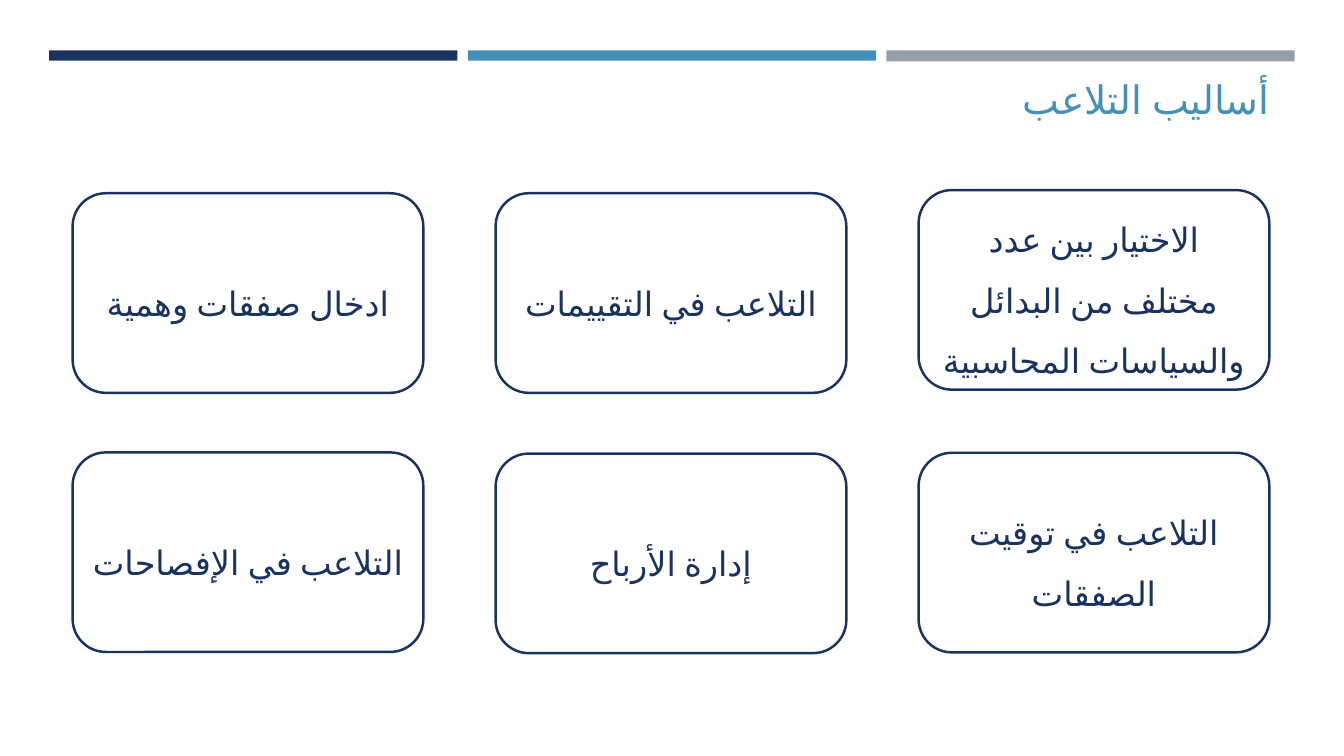
from typing import NamedTuple

from pptx import Presentation
from pptx.dml.color import RGBColor
from pptx.enum.shapes import MSO_SHAPE as SHAPE
from pptx.enum.text import MSO_ANCHOR as ANCHOR, MSO_AUTO_SIZE as AUTO, PP_ALIGN as ALIGN
from pptx.util import Cm, Pt

COLORS = {"navy": "1A3260", "blue": "4590B8", "gray": "969FA7", "white": "FFFFFF"}
FONT = "Cabin"
LANGUAGE = "ar-EG"

BAR_LEFT, BAR_TOP, BAR_WIDTH, BAR_PITCH = 1.24, 1.27, 10.29, 10.55
BOX_LEFT, BOX_PITCH, BOX_WIDTH, BOX_HEIGHT = 1.83, 10.66, 8.84, 5.03


class Bar(NamedTuple):
    color: str
    height: float


class Method(NamedTuple):
    column: int
    top: float
    text: str


BARS = [Bar("navy", 0.26), Bar("blue", 0.26), Bar("gray", 0.28)]
METHODS = [
    Method(2, 4.79, "الاختيار بين عدد مختلف من البدائل والسياسات المحاسبية"),
    Method(1, 4.87, "التلاعب في التقييمات"),
    Method(0, 4.87, "ادخال صفقات وهمية"),
    Method(2, 11.41, "التلاعب في توقيت الصفقات"),
    Method(1, 11.43, "إدارة الأرباح"),
    Method(0, 11.4, "التلاعب في الإفصاحات"),
]


def rgb(name: str) -> RGBColor:
    return RGBColor.from_string(COLORS[name])


def set_all(target, values: dict) -> None:
    for name, value in values.items():
        setattr(target, name, value)


def write_arabic(sp, text: str, size: float, color: str, frame: dict, paragraph: dict) -> None:
    """Fill the shape with one right-to-left paragraph."""
    tf = sp.text_frame
    set_all(tf, {"word_wrap": True, "auto_size": AUTO.NONE, **frame})
    p = tf.paragraphs[0]
    set_all(p, paragraph)
    p._p.get_or_add_pPr().set("rtl", "1")
    r = p.add_run()
    r.text = text
    set_all(r.font, {"name": FONT, "size": Pt(size)})
    r.font.color.rgb = rgb(color)
    r.font._element.set("lang", LANGUAGE)


def add_filled(slide, kind: SHAPE, left: float, top: float, width: float, height: float, fill: str):
    sp = slide.shapes.add_shape(kind, Cm(left), Cm(top), Cm(width), Cm(height))
    sp.shadow.inherit = False
    sp.fill.solid()
    sp.fill.fore_color.rgb = rgb(fill)
    return sp


def add_bar(slide, column: int, bar: Bar) -> None:
    sp = add_filled(slide, SHAPE.RECTANGLE, BAR_LEFT + column * BAR_PITCH, BAR_TOP,
                    BAR_WIDTH, bar.height, bar.color)
    sp.line.fill.background()


def add_title(slide, text: str) -> None:
    sp = slide.shapes.title
    set_all(sp, {"left": Cm(1.63), "top": Cm(1.78), "width": Cm(30.63), "height": Cm(3.05)})
    write_arabic(sp, text, 28, "blue", {"vertical_anchor": ANCHOR.TOP}, {"alignment": ALIGN.RIGHT})


def add_method(slide, method: Method) -> None:
    sp = add_filled(slide, SHAPE.ROUNDED_RECTANGLE, BOX_LEFT + method.column * BOX_PITCH,
                    method.top, BOX_WIDTH, BOX_HEIGHT, "white")
    sp.line.color.rgb = rgb("navy")
    sp.line.width = Pt(1.75)
    write_arabic(sp, method.text, 24, "navy", {"vertical_anchor": ANCHOR.MIDDLE},
                 {"alignment": ALIGN.CENTER, "line_spacing": 1.5})


def main() -> None:
    prs = Presentation()
    set_all(prs, {"slide_width": Cm(33.87), "slide_height": Cm(19.05)})
    slide = prs.slides.add_slide(prs.slide_layouts.get_by_name("Title Only"))
    for column, bar in enumerate(BARS):
        add_bar(slide, column, bar)
    add_title(slide, "أساليب التلاعب")
    for method in METHODS:
        add_method(slide, method)
    prs.save("out.pptx")


if __name__ == "__main__":
    main()
